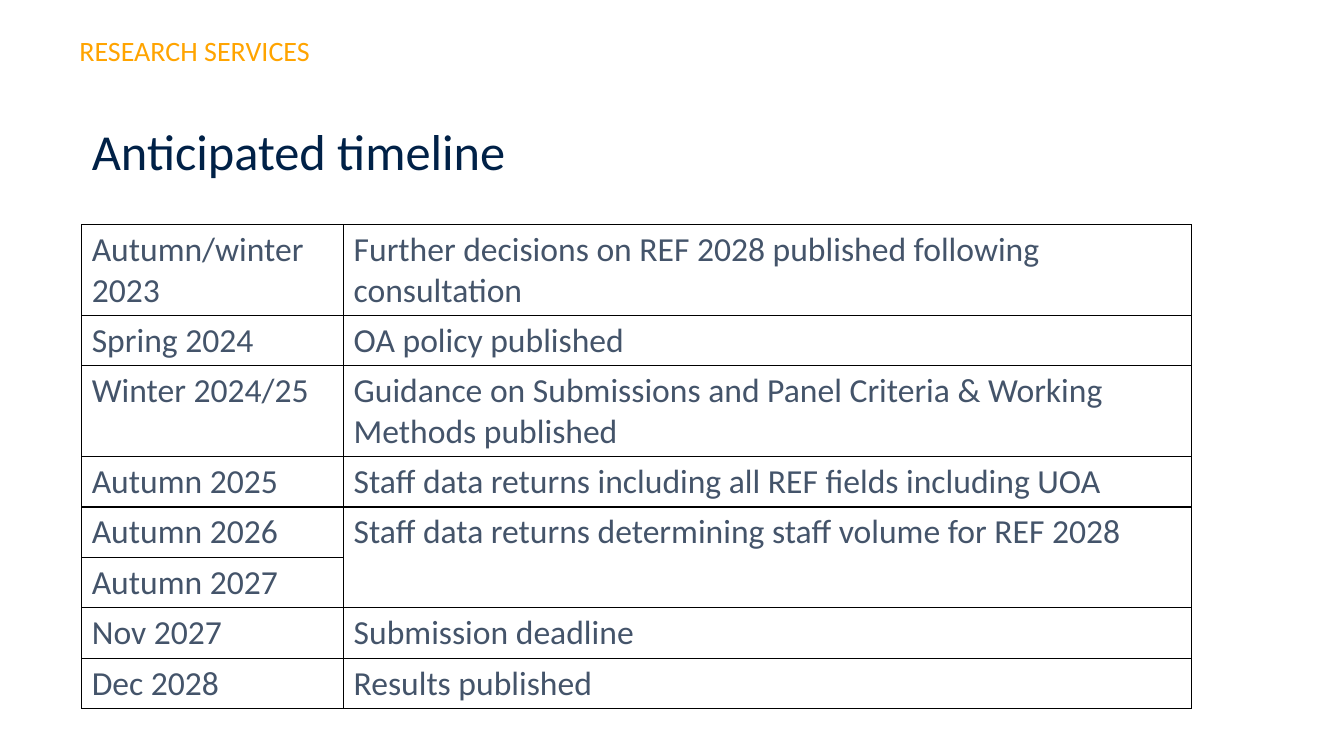
from dataclasses import dataclass

from lxml import etree
from pptx import Presentation
from pptx import util as u
from pptx.dml.color import RGBColor
from pptx.enum import text
from pptx.oxml import ns


@dataclass(frozen=True)
class Theme:
    font: str = "Calibri"
    orange: str = "FFA400"
    navy: str = "002147"
    slate: str = "44546A"
    border: str = "000000"
    label_size: int = 20
    title_size: int = 36
    table_size: int = 24


theme = Theme()


def add_run(p, words, size, colour):
    r = p.add_run()
    r.text = words
    r.font.name = theme.font
    r.font.size = u.Pt(size)
    r.font.color.rgb = RGBColor.from_string(colour)


def add_borders(cell):
    tc_pr = cell._tc.get_or_add_tcPr()
    for i, side in enumerate(("lnL", "lnR", "lnT", "lnB")):
        ln = etree.Element(ns.qn(f"a:{side}"), w=str(u.Pt(1)))
        fill = etree.SubElement(ln, ns.qn("a:solidFill"))
        etree.SubElement(fill, ns.qn("a:srgbClr"), val=theme.border)
        tc_pr.insert(i, ln)


prs = Presentation()
prs.slide_width, prs.slide_height = u.Cm(33.87), u.Cm(19.05)
s = prs.slides.add_slide(prs.slide_layouts[5])

# Department label
sp = s.shapes.add_textbox(u.Cm(1.75), u.Cm(0.71), u.Cm(18.75), u.Cm(1.11))
tf = sp.text_frame
tf.word_wrap = True
add_run(tf.paragraphs[0], "RESEARCH SERVICES", theme.label_size, theme.orange)

# Title
sp = s.shapes.title
sp.left, sp.top, sp.width, sp.height = u.Cm(2.06), u.Cm(3.07), u.Cm(27.97), u.Cm(2.95)
tf = sp.text_frame
tf.auto_size = text.MSO_AUTO_SIZE.NONE
tf.vertical_anchor = text.MSO_ANCHOR.TOP
p = tf.paragraphs[0]
p.alignment = text.PP_ALIGN.LEFT
p.line_spacing = 0.9
add_run(p, "Anticipated timeline", theme.title_size, theme.navy)

# Timeline table
timeline = [
    ("Autumn/winter 2023", "Further decisions on REF 2028 published following consultation"),
    ("Spring 2024", "OA policy published"),
    ("Winter 2024/25", "Guidance on Submissions and Panel Criteria & Working Methods published"),
    ("Autumn 2025", "Staff data returns including all REF fields including UOA"),
    ("Autumn 2026", "Staff data returns determining staff volume for REF 2028"),
    ("Autumn 2027", None),
    ("Nov 2027", "Submission deadline"),
    ("Dec 2028", "Results published"),
]
frame = s.shapes.add_table(len(timeline), 2, u.Cm(2.06), u.Cm(5.66), u.Cm(27.97), u.Cm(12.19))
table = frame.table
table.first_row = table.horz_banding = False
for column, width in zip(table.columns, (6.6, 21.37)):
    column.width = u.Cm(width)

for row, entries in zip(table.rows, timeline):
    row.height = u.Cm(1.04)
    for cell, words in zip(row.cells, entries):
        cell.fill.background()
        add_borders(cell)
        if words:
            add_run(cell.text_frame.paragraphs[0], words, theme.table_size, theme.slate)

# One entry covers both staff return dates
table.cell(4, 1).merge(table.cell(5, 1))

prs.save("out.pptx")
